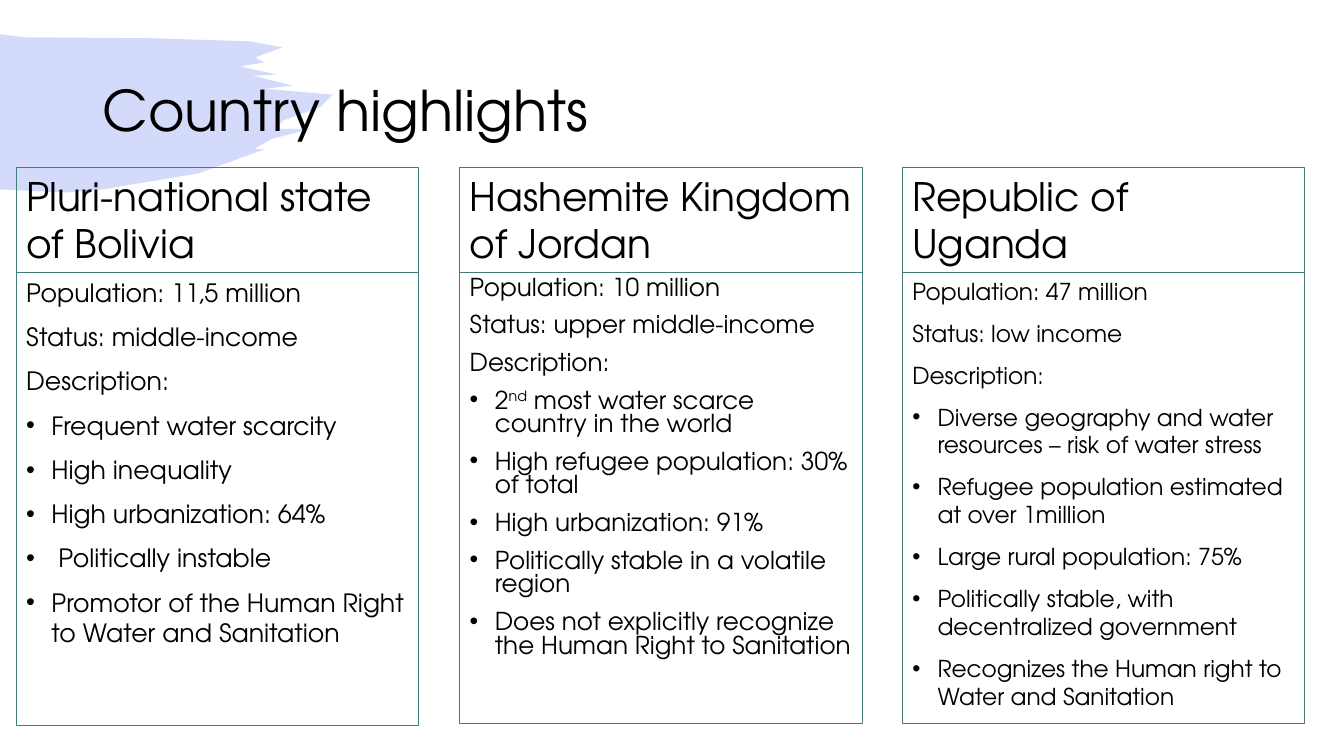
from lxml import etree
from pptx import Presentation
from pptx import util as u
from pptx.dml.color import RGBColor
from pptx.enum import text
from pptx.oxml import ns

FONT = "TeX Gyre Adventor"
INK, BORDER, BRUSH = "000000", "457C7A", "294FE7"
TITLE = "Country highlights"
COUNTRIES = [
    {
        "name": "Pluri-national state of Bolivia",
        "left": 0.16, "height": 4.5, "size": 18, "spacing": 1.0,
        "facts": ["Population: 11,5 million", "Status: middle-income", "Description:"],
        "points": [
            "Frequent water scarcity",
            "High inequality",
            "High urbanization: 64%",
            " Politically instable",
            "Promotor of the Human Right to Water and Sanitation",
        ],
    },
    {
        "name": "Hashemite Kingdom of Jordan",
        "left": 4.56, "height": 4.48, "size": 17.6, "spacing": 0.8,
        "facts": ["Population: 10 million", "Status: upper middle-income", "Description:"],
        "points": [
            ("2", "nd", " most water scarce country in the world"),
            "High refugee population: 30% of total",
            "High urbanization: 91%",
            "Politically stable in a volatile region",
            "Does not explicitly recognize the Human Right to Sanitation",
        ],
    },
    {
        "name": "Republic of Uganda",
        "left": 8.95, "height": 4.48, "size": 16.6, "spacing": 1.0,
        "facts": ["Population: 47 million", "Status: low income", "Description:"],
        "points": [
            "Diverse geography and water resources – risk of water stress",
            "Refugee population estimated at over 1million",
            "Large rural population: 75%",
            "Politically stable, with decentralized government",
            "Recognizes the Human right to Water and Sanitation",
        ],
    },
]
COLUMN_WIDTH, HEADING_TOP, HEADING_HEIGHT = 3.99, 1.66, 1.04
BRUSH_OUTLINE = [
    (0, 0.34), (0.25, 0.37), (1.51, 0.38), (2.48, 0.41), (2.8, 0.47),
    (2.53, 0.57), (2.62, 0.62), (2.38, 0.66), (2.75, 0.74), (2.51, 0.75),
    (2.9, 0.85), (2.63, 0.88), (3.3, 0.94), (3.18, 1.06), (2.8, 1.2),
    (2.74, 1.28), (3.08, 1.28), (2.69, 1.38), (2.52, 1.48), (2.63, 1.48),
    (1.97, 1.72), (1.02, 1.88), (0.65, 1.91), (0, 1.88),
]


def color(value):
    return RGBColor.from_string(value)


def add_child(parent, tag, **attributes):
    return etree.SubElement(parent, ns.qn(tag), attributes)


def place(box, left, top, width, height):
    box.left, box.top = u.Inches(left), u.Inches(top)
    box.width, box.height = u.Inches(width), u.Inches(height)


def outline(box):
    box.line.color.rgb = color(BORDER)
    box.line.width = u.Pt(0.75)


def write(para, content, size, spacing=1.0, before=0, bullet=None):
    para.alignment = text.PP_ALIGN.LEFT
    para.line_spacing = spacing
    para.space_before = u.Pt(before)
    parts = (content,) if isinstance(content, str) else content
    for number, part in enumerate(parts):
        span = para.add_run()
        span.text = part
        span.font.name = FONT
        span.font.size = u.Pt(size)
        span.font.color.rgb = color(INK)
        if number == 1:
            span.font._element.set("baseline", "30000")
    properties = para._p.get_or_add_pPr()
    indent = u.Inches(0.25) if bullet else 0
    properties.set("marL", str(indent))
    properties.set("indent", str(-indent))
    if bullet:
        add_child(properties, "a:buFont", typeface="Arial")
        add_child(properties, "a:buChar", char=bullet)
    else:
        add_child(properties, "a:buNone")


def add_brush(page):
    corners = [(u.Inches(x), u.Inches(y)) for x, y in BRUSH_OUTLINE]
    builder = page.shapes.build_freeform(*corners[0], scale=1.0)
    builder.add_line_segments(corners[1:], close=True)
    brush = builder.convert_to_shape()
    brush.shadow.inherit = False
    brush.line.fill.background()
    brush.fill.solid()
    brush.fill.fore_color.rgb = color(BRUSH)
    fill = brush._element.spPr.find(ns.qn("a:solidFill"))
    add_child(fill[0], "a:alpha", val="20000")
    page.shapes._spTree.insert(2, brush._element)


def add_country(page, country, box):
    place(box, country["left"], HEADING_TOP + HEADING_HEIGHT, COLUMN_WIDTH, country["height"])
    outline(box)
    frame = box.text_frame
    frame.word_wrap = True
    frame.auto_size = text.MSO_AUTO_SIZE.NONE
    rows = [(fact, None) for fact in country["facts"]]
    rows += [(point, "•") for point in country["points"]]
    for number, (content, bullet) in enumerate(rows):
        para = frame.add_paragraph() if number else frame.paragraphs[0]
        write(para, content, country["size"], country["spacing"], before=10, bullet=bullet)

    heading = page.shapes.add_textbox(0, 0, 0, 0)
    place(heading, country["left"], HEADING_TOP, COLUMN_WIDTH, HEADING_HEIGHT)
    outline(heading)
    heading.text_frame.word_wrap = True
    heading.text_frame.auto_size = text.MSO_AUTO_SIZE.SHAPE_TO_FIT_TEXT
    write(heading.text_frame.paragraphs[0], country["name"], 28)


def main():
    deck = Presentation()
    deck.slide_width, deck.slide_height = u.Inches(13.33), u.Inches(7.5)
    page = deck.slides.add_slide(deck.slide_layouts[1])
    add_brush(page)

    title = page.shapes.title
    place(title, 0.92, 0.4, 11.5, 1.45)
    title.text_frame.vertical_anchor = text.MSO_ANCHOR.MIDDLE
    title.text_frame.auto_size = text.MSO_AUTO_SIZE.NONE
    write(title.text_frame.paragraphs[0], TITLE, 40, spacing=0.9)

    for number, country in enumerate(COUNTRIES):
        box = page.shapes.add_textbox(0, 0, 0, 0) if number else page.placeholders[1]
        add_country(page, country, box)
    deck.save("out.pptx")


if __name__ == "__main__":
    main()
